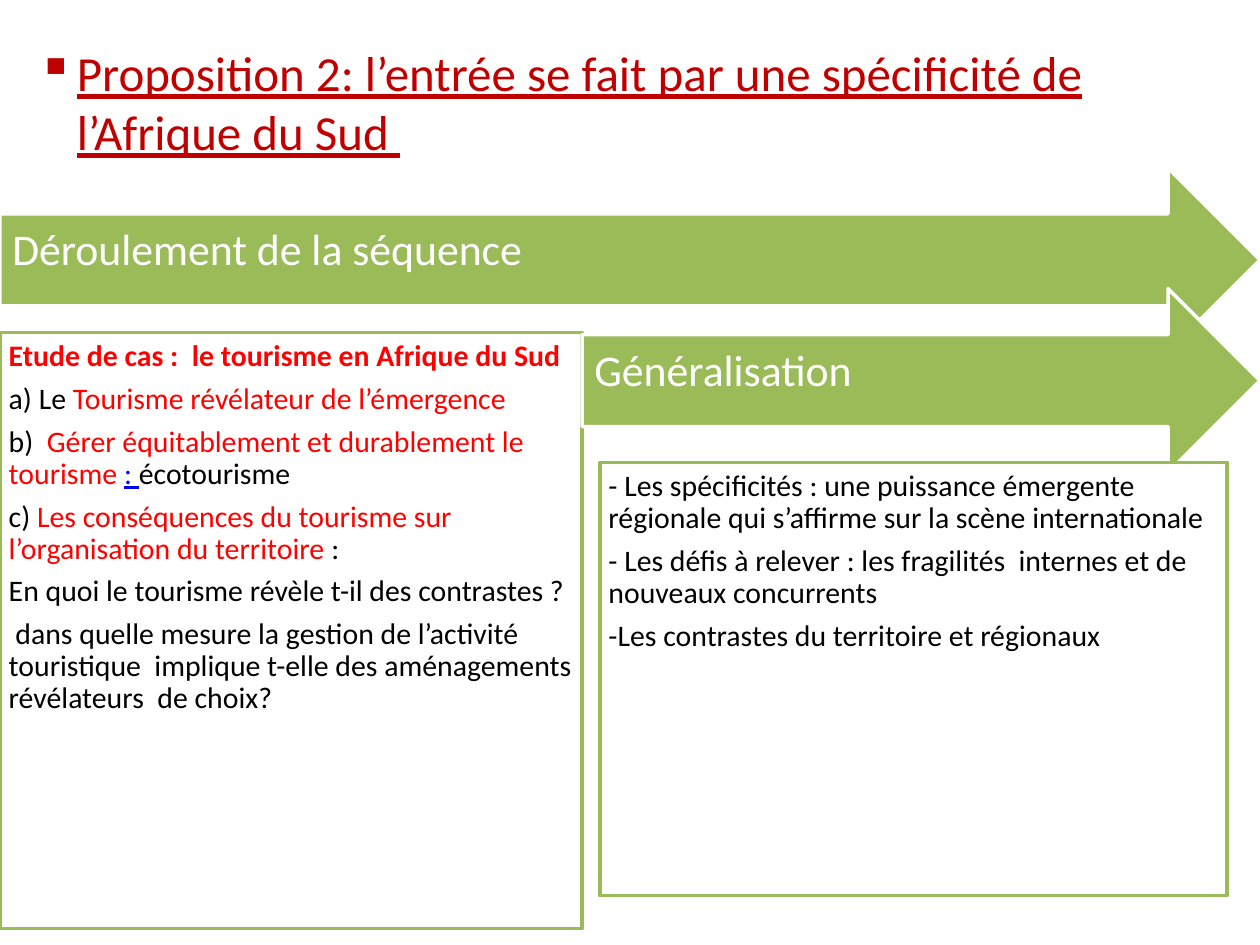
from pptx import Presentation
from pptx.dml.color import RGBColor
from pptx.enum.shapes import MSO_SHAPE
from pptx.enum.text import MSO_ANCHOR
from pptx.oxml import parse_xml
from pptx.oxml.ns import nsdecls
from pptx.util import Pt

GREEN = RGBColor(0x9B, 0xBB, 0x59)
WHITE = RGBColor(0xFF, 0xFF, 0xFF)
BLACK = RGBColor(0, 0, 0)
RED = RGBColor(0xFF, 0, 0)
DARK_RED = RGBColor(0xC0, 0, 0)
BLUE = RGBColor(0, 0, 0xFF)

CASE_STUDY = [
    [("Etude de cas :  le tourisme en Afrique du Sud", dict(color=RED, bold=True))],
    [("a) Le ", {}), ("Tourisme révélateur de l’émergence", dict(color=RED))],
    [("b)  ", {}),
     ("Gérer équitablement et durablement le tourisme ", dict(color=RED)),
     (": ", dict(color=BLUE, underline=True)), ("écotourisme", {})],
    [("c) ", {}),
     ("Les conséquences du tourisme sur l’organisation du territoire ", dict(color=RED)),
     (":", {})],
    [("En quoi le tourisme révèle t-il des contrastes ?", {})],
    [(" dans quelle mesure la gestion de l’activité touristique  implique t-elle "
      "des aménagements révélateurs  de choix?", {})],
]
GENERALISATION = [
    [("- Les spécificités : une puissance émergente  régionale qui s’affirme "
      "sur la scène internationale", {})],
    [("- Les défis à relever : les fragilités  internes et de nouveaux concurrents", {})],
    [("-Les contrastes du territoire et régionaux", {})],
]


def add_run(p, text, size=17, color=BLACK, bold=False, underline=False):
    r = p.add_run()
    r.text = text
    r.font.name = "Calibri"
    r.font.size = Pt(size)
    r.font.color.rgb = color
    r.font.bold = bold
    r.font.underline = underline


def add_text(s, box, paragraphs, insets=(5, 5, 5, 5), anchor=MSO_ANCHOR.TOP,
             line_spacing=0.9, space_after=6):
    tf = s.shapes.add_textbox(*map(Pt, box)).text_frame
    tf.word_wrap = True
    tf.vertical_anchor = anchor
    tf.margin_left, tf.margin_top, tf.margin_right, tf.margin_bottom = map(Pt, insets)
    for i, runs in enumerate(paragraphs):
        p = tf.add_paragraph() if i else tf.paragraphs[0]
        p.line_spacing = line_spacing
        p.space_after = Pt(space_after)
        for text, fmt in runs:
            add_run(p, text, **fmt)
    return tf


def add_block(s, kind, box, fill, line):
    sp = s.shapes.add_shape(kind, *map(Pt, box))
    sp.shadow.inherit = False
    sp.fill.solid()
    sp.fill.fore_color.rgb = fill
    sp.line.color.rgb = line
    sp.line.width = Pt(2)


def add_arrow(s, left, top, width, label):
    height = 105
    add_block(s, MSO_SHAPE.RIGHT_ARROW, (left, top, width, height), GREEN, WHITE)
    # The label fills the shaft, which is half as high as the arrow
    add_text(s, (left, top + height / 4, width - height / 4, height / 2),
             [[(label, dict(size=25, color=WHITE))]], insets=(7.2, 7.2, 20, 16.6),
             anchor=MSO_ANCHOR.MIDDLE, space_after=9)


def add_panel(s, box, paragraphs):
    add_block(s, MSO_SHAPE.RECTANGLE, box, WHITE, GREEN)
    add_text(s, box, paragraphs)


def add_title(s, text):
    tf = add_text(s, (14.4, 20.9, 680.4, 75),
                  [[(text, dict(size=28, color=DARK_RED, underline=True))]],
                  insets=(7.2, 3.6, 7.2, 3.6), line_spacing=1.0, space_after=0)
    # Hanging square bullet
    pPr = tf.paragraphs[0]._p.get_or_add_pPr()
    pPr.set("marL", str(Pt(22.5)))
    pPr.set("indent", str(-Pt(22.5)))
    pPr.append(parse_xml(f'<a:buChar {nsdecls("a")} char="▪"/>'))


def main():
    prs = Presentation()
    prs.slide_width, prs.slide_height = Pt(720), Pt(540)
    s = prs.slides.add_slide(prs.slide_layouts[6])

    # Sequence: overall arrow and case study
    add_arrow(s, 0, 96, 720, "Déroulement de la séquence")
    add_panel(s, (0, 190, 332.6, 340.6), CASE_STUDY)

    # Generalisation step
    add_arrow(s, 332.6, 165, 387.4, "Généralisation")
    add_panel(s, (342.7, 264.2, 358.6, 247.7), GENERALISATION)

    # Title
    add_title(s, "Proposition 2: l’entrée se fait par une spécificité de l’Afrique du Sud ")

    prs.save("out.pptx")


if __name__ == "__main__":
    main()
